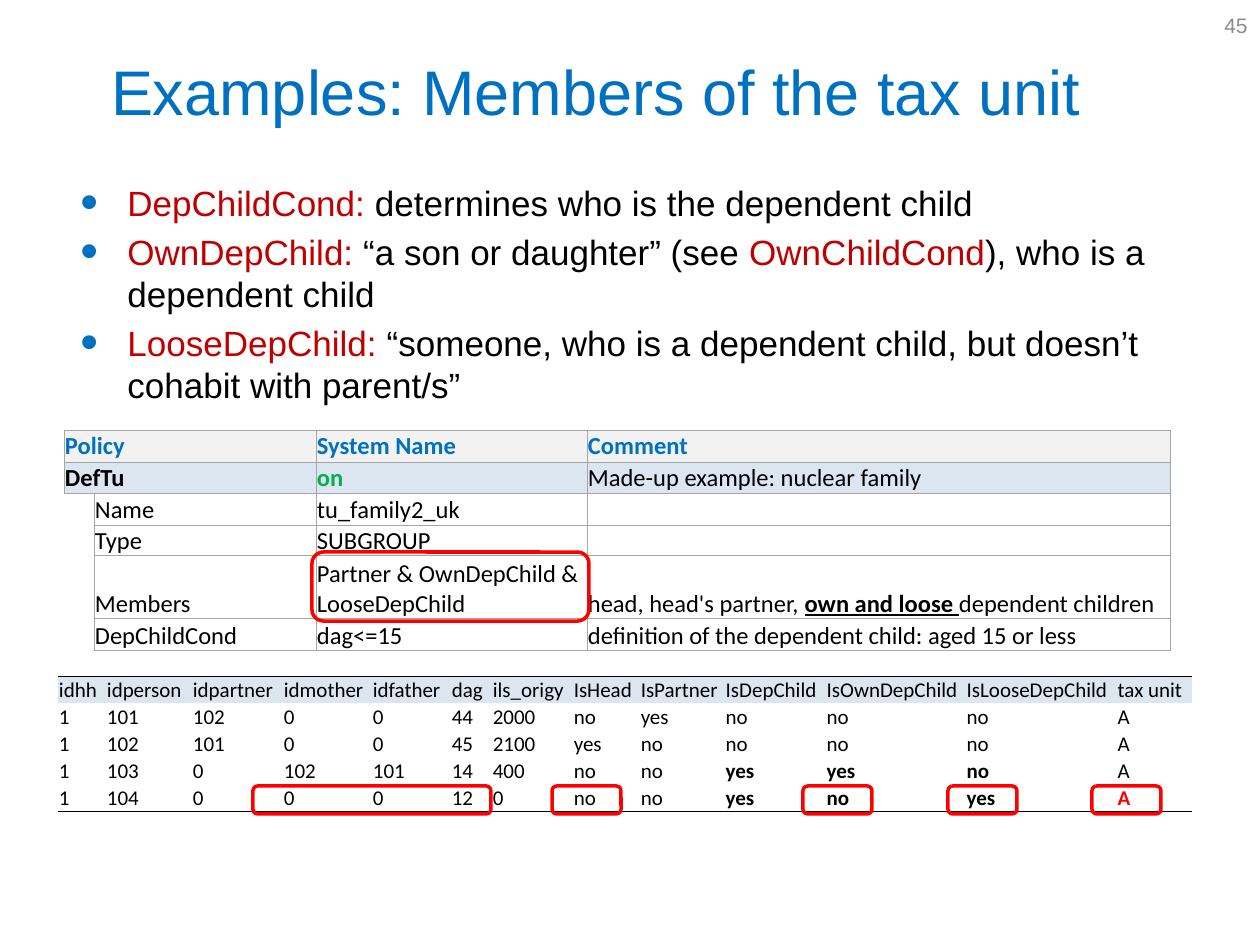
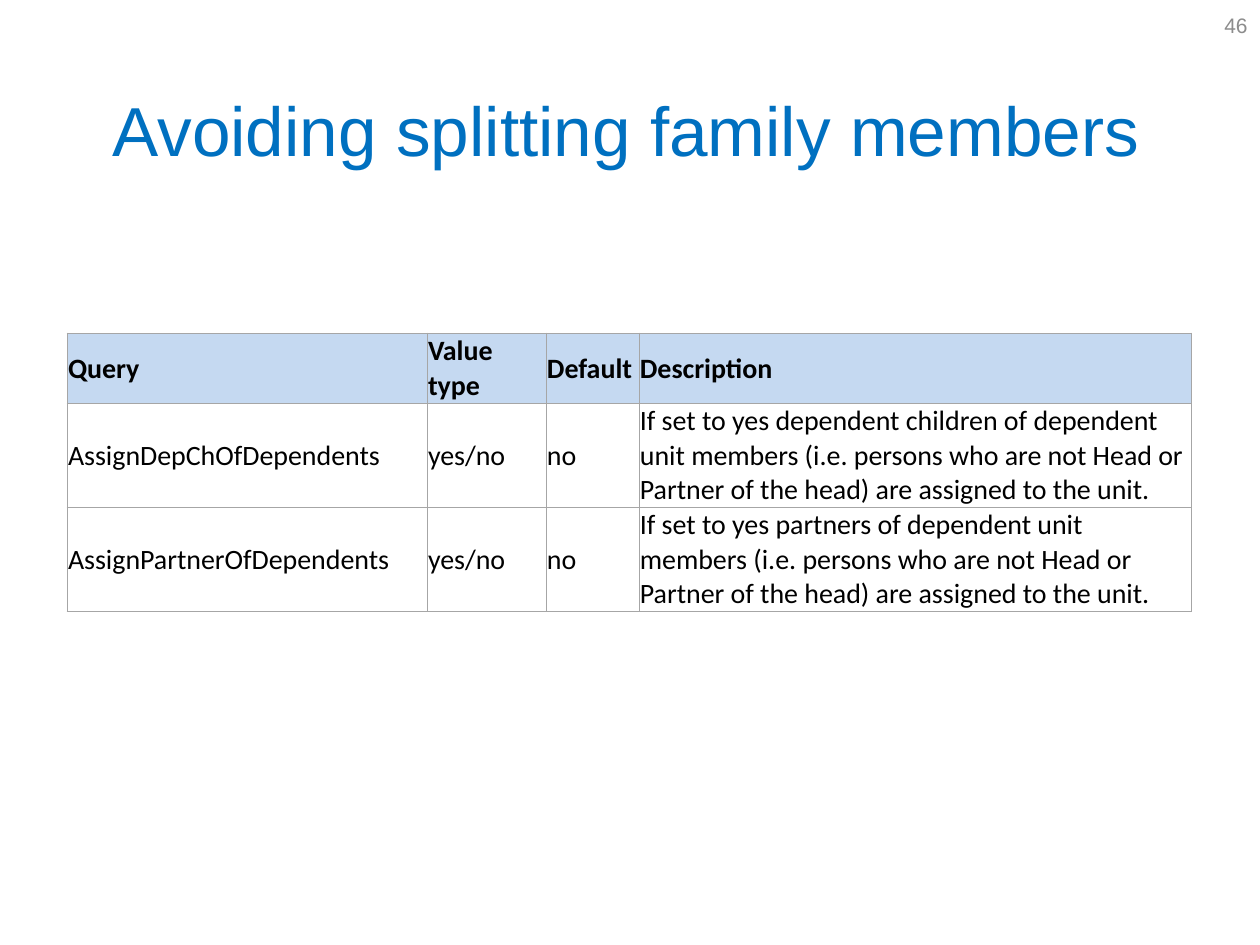
import dataclasses
import typing

import lxml.etree
import pptx
import pptx.dml.color
import pptx.enum.shapes
import pptx.enum.text
import pptx.oxml.ns
import pptx.slide
import pptx.util

SCALE = 914400 / 126
BLUE, RED, BLACK, WHITE = "0070C0", "C00000", "000000", "FFFFFF"
GRAY, GREEN, MARK = "8C8C8C", "00B050", "FF0000"
RULE, PALE, SILVER, SKY = "A6A6A6", "DCE6F1", "F2F2F2", "C5D9F1"
ALIGN = pptx.enum.text.PP_ALIGN
ANCHOR = pptx.enum.text.MSO_ANCHOR
PLAIN = "{2D5ABB26-0587-4C30-8999-92F81FD0307C}"


class Run(typing.NamedTuple):
    text: str
    color: str = BLACK
    bold: bool = False
    under: bool = False


class Box(typing.NamedTuple):
    left: int
    top: int
    width: int
    height: int


Runs = tuple[Run, ...]
Entry = str | Run | Runs


@dataclasses.dataclass
class Band:
    """One table row with its look."""
    height: int
    cells: list[Entry]
    fill: str = WHITE
    anchor: typing.Any = ANCHOR.BOTTOM


@dataclasses.dataclass
class Grid:
    left: int
    top: int
    size: int
    cols: list[int]
    bands: list[Band]
    edges: typing.Callable[[int, int], dict[str, str]]


def px(count: int) -> pptx.util.Emu:
    return pptx.util.Emu(round(count * SCALE))


def tint(code: str) -> pptx.dml.color.RGBColor:
    return pptx.dml.color.RGBColor.from_string(code)


def node(parent: typing.Any, tag: str, **attrs: str) -> typing.Any:
    return lxml.etree.SubElement(parent, pptx.oxml.ns.qn(tag), **attrs)


def write(para: typing.Any, entry: Entry, size: float, face: str) -> None:
    if isinstance(entry, str):
        entry = Run(entry)
    for part in (entry,) if isinstance(entry, Run) else entry:
        run = para.add_run()
        run.text = part.text
        font = run.font
        font.name, font.size = face, pptx.util.Pt(size)
        font.bold, font.underline = part.bold, part.under
        font.color.rgb = tint(part.color)


def label(slide: pptx.slide.Slide, box: Box, lines: list[Entry], size: float,
          align: typing.Any = ALIGN.LEFT, anchor: typing.Any = ANCHOR.MIDDLE) -> typing.Any:
    frame = slide.shapes.add_textbox(*map(px, box)).text_frame
    frame.word_wrap = True
    frame.vertical_anchor = anchor
    for place, line in enumerate(lines):
        para = frame.add_paragraph() if place else frame.paragraphs[0]
        para.alignment = align
        write(para, line, size, "Arial")
    return frame


def bullets(slide: pptx.slide.Slide, box: Box, lines: list[Entry]) -> None:
    frame = label(slide, box, lines, 20, anchor=ANCHOR.TOP)
    for place, para in enumerate(frame.paragraphs):
        para.space_before = pptx.util.Pt(4 if place else 0)
        props = para._p.get_or_add_pPr()
        props.set("marL", str(px(47)))
        props.set("indent", str(px(-47)))
        node(node(props, "a:buClr"), "a:srgbClr", val=BLUE)
        node(props, "a:buSzPct", val="145000")
        node(props, "a:buFont", typeface="Arial")
        node(props, "a:buChar", char="•")


def border(cell: typing.Any, edges: dict[str, str]) -> None:
    """Rule the given sides (L, R, T, B) and leave the others open."""
    props = cell._tc.get_or_add_tcPr()
    for place, side in enumerate("LRTB"):
        line = node(props, f"a:ln{side}", w=str(pptx.util.Pt(0.5)))
        if side in edges:
            node(node(line, "a:solidFill"), "a:srgbClr", val=edges[side])
        else:
            node(line, "a:noFill")
        props.insert(place, line)


def draw(slide: pptx.slide.Slide, grid: Grid) -> typing.Any:
    box = Box(grid.left, grid.top, sum(grid.cols), sum(band.height for band in grid.bands))
    table = slide.shapes.add_table(len(grid.bands), len(grid.cols), *map(px, box)).table
    table.first_row = table.horz_banding = False
    table._tbl.tblPr.find(pptx.oxml.ns.qn("a:tableStyleId")).text = PLAIN
    for col, width in zip(table.columns, grid.cols):
        col.width = px(width)
    for y, band in enumerate(grid.bands):
        table.rows[y].height = px(band.height)
        for x, entry in enumerate(band.cells):
            cell = table.cell(y, x)
            cell.margin_left = cell.margin_right = cell.margin_top = px(1)
            cell.margin_bottom = 0
            cell.vertical_anchor = band.anchor
            cell.fill.solid()
            cell.fill.fore_color.rgb = tint(band.fill)
            border(cell, grid.edges(y, x))
            para = cell.text_frame.paragraphs[0]
            if entry:
                write(para, entry, grid.size, "Calibri")
            else:
                node(para._p, "a:endParaRPr", sz=str(grid.size * 100))
    return table


def ring(slide: pptx.slide.Slide, box: Box) -> None:
    kind = pptx.enum.shapes.MSO_SHAPE.ROUNDED_RECTANGLE
    shape = slide.shapes.add_shape(kind, *map(px, box))
    shape.shadow.inherit = False
    shape.fill.background()
    shape.line.color.rgb = tint(MARK)
    shape.line.width = pptx.util.Pt(2)


def start(deck: typing.Any, number: int, title: str, box: Box, size: float) -> pptx.slide.Slide:
    """Add a blank slide with its page number and title."""
    slide = deck.slides.add_slide(deck.slide_layouts[6])
    label(slide, Box(966, 0, 294, 50), [Run(str(number), GRAY)], 12, ALIGN.RIGHT)
    label(slide, box, [Run(title, BLUE)], size, ALIGN.CENTER)
    return slide


def bold(*words: str, color: str = BLACK) -> list[Entry]:
    return [Run(word, color, True) for word in words]


def boxed(y: int, x: int) -> dict[str, str]:
    return dict.fromkeys("LRTB", RULE)


def nested(y: int, x: int) -> dict[str, str]:
    """Full rules, except for the indent below the two top rows."""
    if x or y < 2:
        return boxed(y, x)
    return {"R": RULE, "T": RULE} if y == 2 else {"R": RULE}


def framed(y: int, x: int) -> dict[str, str]:
    """Rules above the head and below the last of five rows."""
    return {0: {"T": BLACK}, 4: {"B": BLACK}}.get(y, {})


POINTS: list[Entry] = [
    (Run("DepChildCond: ", RED), Run("determines who is the dependent child")),
    (Run("OwnDepChild:", RED), Run(" “a son or daughter” (see "),
     Run("OwnChildCond", RED), Run("), who is a dependent child")),
    (Run("LooseDepChild:", RED),
     Run(" “someone, who is a dependent child, but doesn’t cohabit with parent/s”")),
]

POLICY = Grid(64, 430, 14, [30, 222, 271, 583], [
    Band(32, ["", *bold("System Name", "Comment", color=BLUE)], SILVER, ANCHOR.MIDDLE),
    Band(31, ["", Run("on", GREEN, True), "Made-up example: nuclear family"],
         PALE, ANCHOR.MIDDLE),
    Band(32, ["", "Name", "tu_family2_uk", ""]),
    Band(31, ["", "Type", "SUBGROUP", ""]),
    Band(63, ["", "Members", "Partner & OwnDepChild & LooseDepChild",
              (Run("head, head's partner, "), Run("own and loose ", BLACK, True, True),
               Run("dependent children"))]),
    Band(32, ["", "DepChildCond", "dag<=15",
              "definition of the dependent child: aged 15 or less"]),
], nested)
for band, name in zip(POLICY.bands, bold("Policy", color=BLUE) + bold("DefTu")):
    band.cells[:1] = [name, ""]

PEOPLE = Grid(
    58, 676, 12, [48, 86, 91, 89, 79, 41, 81, 67, 85, 101, 140, 151, 75], [
        Band(27, ["idhh", "idperson", "idpartner", "idmother", "idfather", "dag",
                  "ils_origy", "IsHead", "IsPartner", "IsDepChild", "IsOwnDepChild",
                  "IsLooseDepChild", "tax unit"], PALE),
        Band(27, [*"1 101 102 0 0 44 2000 no yes no no no A".split()]),
        Band(27, [*"1 102 101 0 0 45 2100 yes no no no no A".split()]),
        Band(27, [*"1 103 0 102 101 14 400 no no".split(), *bold("yes", "yes", "no"), "A"]),
        Band(27, [*"1 104 0 0 0 12 0 no no".split(), *bold("yes", "no", "yes"),
                  Run("A", MARK, True)]),
    ], framed)

QUERIES = Grid(67, 333, 16, [360, 119, 93, 553], [
    Band(70, bold("Query", "Value type", "Default", "Description"), SKY, ANCHOR.MIDDLE),
    *(Band(104, [name, "yes/no", "no",
                 f"If set to yes {whom} of dependent unit members (i.e. persons who are "
                 "not Head or Partner of the head) are assigned to the unit."],
           anchor=ANCHOR.MIDDLE)
      for name, whom in (("AssignDepChOfDependents", "dependent children"),
                         ("AssignPartnerOfDependents", "partners"))),
], boxed)

RINGS = [Box(312, 552, 277, 69), Box(253, 786, 238, 28),
         *(Box(left, 786, 69, 28) for left in (552, 803, 948, 1092))]


def main() -> None:
    deck = pptx.Presentation()
    deck.slide_width, deck.slide_height = px(1260), px(945)

    units = start(deck, 45, "Examples: Members of the tax unit", Box(29, 35, 1134, 110), 36)
    bullets(units, Box(68, 175, 1113, 275), POINTS)
    policy = draw(units, POLICY)
    for y in range(2):
        policy.cell(y, 0).merge(policy.cell(y, 1))
    draw(units, PEOPLE)
    for box in RINGS:
        ring(units, box)

    split = start(deck, 46, "Avoiding splitting family members", Box(59, 50, 1134, 158), 39.6)
    draw(split, QUERIES)
    deck.save("out.pptx")


if __name__ == "__main__":
    main()
